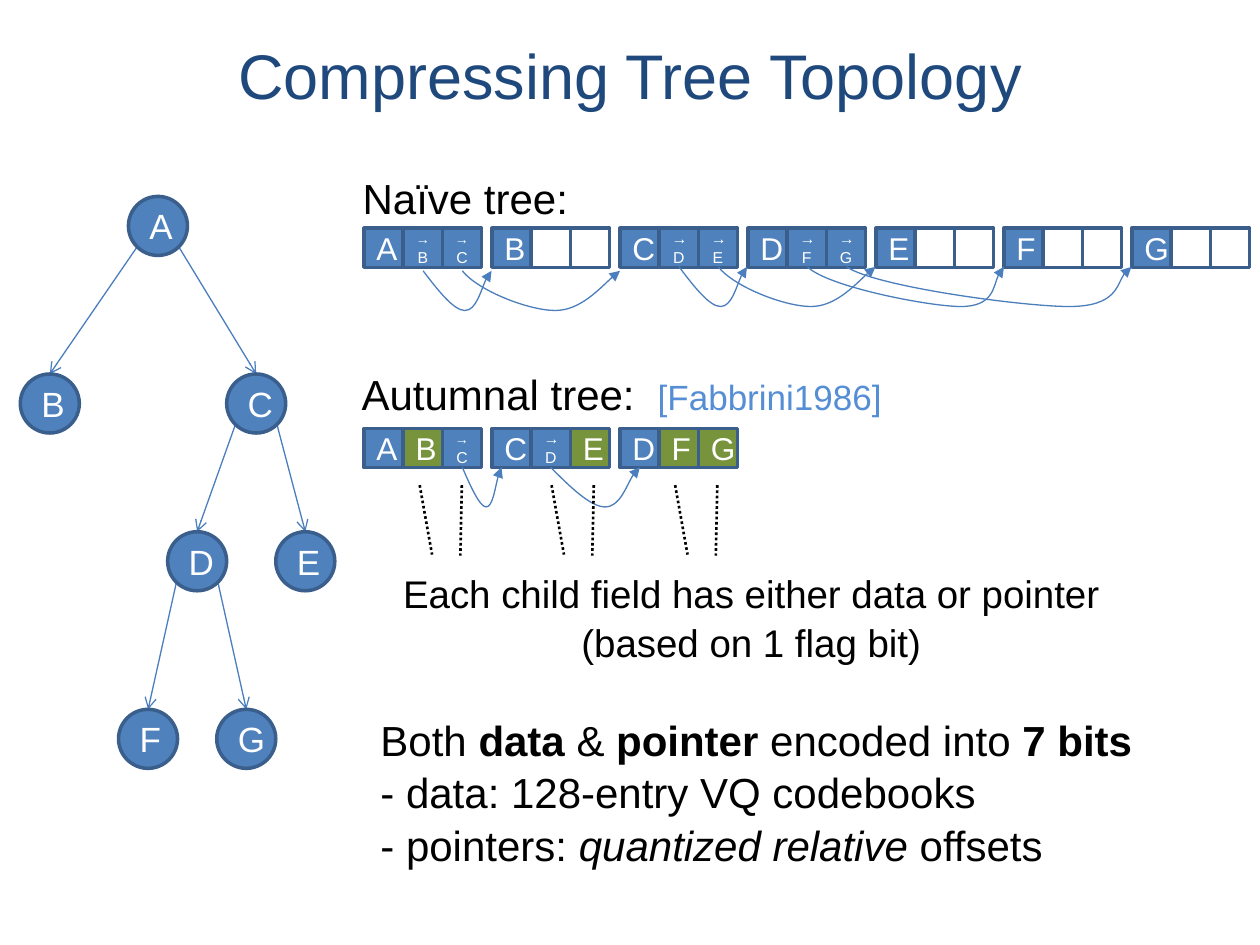
from lxml.etree import SubElement
from pptx import Presentation
from pptx.dml.color import RGBColor
from pptx.enum.dml import MSO_LINE
from pptx.enum.shapes import MSO_CONNECTOR, MSO_SHAPE
from pptx.enum.text import MSO_ANCHOR, MSO_AUTO_SIZE, PP_ALIGN
from pptx.oxml import parse_xml
from pptx.oxml.ns import nsdecls, qn
from pptx.util import Cm, Pt

BLUE, GREEN, WHITE, BLACK = "4F81BD", "77933C", "FFFFFF", "000000"
OUTLINE, LINK = "3A5F8C", "4B7EBC"

# Lengths are in centimetres
CELL, RECORD_PITCH, RECORDS_LEFT = 0.79, 2.58, 7.34
NODE = 1.19
NAIVE_TOP, AUTUMNAL_TOP = 4.6, 8.64

NAIVE_RECORDS = [("A", "→ B", "→ C"), ("B", "", ""), ("C", "→D", "→E"),
                 ("D", "→F", "→G"), ("E", "", ""), ("F", "", ""), ("G", "", "")]
AUTUMNAL_RECORDS = [("A", "B", "→ C"), ("C", "→D", "E"), ("D", "F", "G")]

NODES = {"A": (2.59, 3.96), "B": (0.41, 7.54), "C": (4.57, 7.54), "D": (3.38, 10.72),
         "E": (5.56, 10.72), "F": (2.39, 14.3), "G": (4.37, 14.3)}
EDGES = ["AB", "AC", "CD", "CE", "DF", "DG"]

# Pointer curves: horizontal shares of the width, and vertical shares of the depth
SHORT = (0, 0.22, 0.45, 0.61, 0.78, 0.91, 1)
MEDIUM = (0, 0.1, 0.42, 0.59, 0.75, 0.96, 1)
LONG = (0, 0.1, 0.62, 0.78, 0.95, 0.96, 1)
DEPTH_SHARES = (0, 0.5, 1, 1, 1, 0.09, 0)
POINTERS = [  # start, end, top, profile
    (8.53, 9.91, 5.46, SHORT), (9.32, 12.5, 5.46, MEDIUM),
    (13.69, 15.06, 5.38, SHORT), (14.48, 17.65, 5.38, MEDIUM),
    (16.28, 20.24, 5.38, LONG), (17.07, 22.81, 5.38, LONG),
    (9.32, 10.11, 9.42, SHORT), (11.1, 12.9, 9.42, SHORT),
]


def color(hex_string):
    return RGBColor.from_string(hex_string)


def add_run(paragraph, text, hex_string, **formats):
    run = paragraph.add_run()
    run.text = text
    run.font.color.rgb = color(hex_string)
    for name, value in {"name": "Arial", **formats}.items():
        setattr(run.font, name, value)
    return run


def style_line(line, hex_string, width):
    line.color.rgb = color(hex_string)
    line.width = Pt(width)


def add_arrowhead(shape, kind):
    line = shape.element.xpath(".//a:ln")[0]
    SubElement(line, qn("a:tailEnd"), type=kind)


def add_text(slide, box, lines, size, line_break=False, tab=None,
             alignment=PP_ALIGN.LEFT, margin=None):
    """Each line is a list of (text, formats) runs."""
    frame = slide.shapes.add_textbox(*map(Cm, box)).text_frame
    frame.word_wrap = False
    frame.auto_size = MSO_AUTO_SIZE.SHAPE_TO_FIT_TEXT
    if margin is not None:
        for side in ("left", "top", "right", "bottom"):
            setattr(frame, f"margin_{side}", Cm(margin))
    paragraph = frame.paragraphs[0]
    for index, runs in enumerate(lines):
        if index and line_break:
            paragraph.add_line_break()
        elif index:
            paragraph = frame.add_paragraph()
        paragraph.alignment = alignment
        paragraph.line_spacing = 1.05
        if tab:
            tabs = SubElement(paragraph._p.get_or_add_pPr(), qn("a:tabLst"))
            SubElement(tabs, qn("a:tab"), pos=str(Cm(tab)), algn="l")
        for text, formats in runs:
            values = {"hex_string": BLACK, "size": Pt(size), **formats}
            add_run(paragraph, text, **values)


def add_title(slide, text):
    frame = slide.shapes.add_textbox(Cm(1.27), Cm(0), Cm(22.86), Cm(3.18)).text_frame
    frame.word_wrap = True
    frame.vertical_anchor = MSO_ANCHOR.MIDDLE
    paragraph = frame.paragraphs[0]
    paragraph.alignment = PP_ALIGN.CENTER
    paragraph.line_spacing = 0.9
    run = add_run(paragraph, text, "1F497D", size=Pt(36))
    # Soft shadow behind the letters
    shadow = parse_xml(
        f'<a:effectLst {nsdecls("a")}><a:outerShdw blurRad="38100" dist="38100" dir="2700000">'
        '<a:srgbClr val="000000"><a:alpha val="43000"/></a:srgbClr></a:outerShdw></a:effectLst>')
    run._r.xpath("./a:rPr/a:solidFill")[0].addnext(shadow)


def add_label_shape(slide, kind, left, top, side, fill, runs):
    shape = slide.shapes.add_shape(kind, Cm(left), Cm(top), Cm(side), Cm(side))
    shape.shadow.inherit = False
    shape.fill.solid()
    shape.fill.fore_color.rgb = color(fill)
    style_line(shape.line, OUTLINE, 2)
    paragraph = shape.text_frame.paragraphs[0]
    paragraph.alignment = PP_ALIGN.CENTER
    for text, size in runs:
        add_run(paragraph, text, WHITE, size=Pt(size))


def add_records(slide, records, top):
    for row, record in enumerate(records):
        for column, text in enumerate(record):
            left = RECORDS_LEFT + row * RECORD_PITCH + column * CELL
            if text.startswith("→"):
                fill = BLUE
                runs = [("→", 8 if " " in text else 9), (text[1:], 9)]
            else:
                fill = WHITE if not text else GREEN if column else BLUE
                runs = [(text, 18)] if text else []
            add_label_shape(slide, MSO_SHAPE.RECTANGLE, left, top, CELL, fill, runs)


def add_line(slide, start, end, hex_string, width):
    connector = slide.shapes.add_connector(MSO_CONNECTOR.STRAIGHT, *map(Cm, (*start, *end)))
    style_line(connector.line, hex_string, width)
    SubElement(connector.element.spPr, qn("a:effectLst"))
    return connector


def add_tree(slide):
    for parent, child in EDGES:
        left, top = NODES[parent]
        child_left, child_top = NODES[child]
        # From the lower left or right of the parent to the top of the child
        share = 0.15 if child_left < left else 0.85
        start = (left + share * NODE, top + 0.85 * NODE)
        edge = add_line(slide, start, (child_left + NODE / 2, child_top), LINK, 0.75)
        add_arrowhead(edge, "arrow")
    for name, (left, top) in NODES.items():
        add_label_shape(slide, MSO_SHAPE.OVAL, left, top, NODE, BLUE, [(name, 20)])


def add_pointer(slide, start, end, top, profile, depth=0.8):
    points = [(Cm(start + x * (end - start)), Cm(top + y * depth))
              for x, y in zip(profile, DEPTH_SHARES)]
    builder = slide.shapes.build_freeform(*points[0])
    builder.add_line_segments(points[1:], close=False)
    shape = builder.convert_to_shape()
    # Turn each three segments into one Bézier curve
    segments = shape.element.xpath(".//a:lnTo")
    outline = segments[0].getparent()
    for first in range(0, len(segments), 3):
        curve = SubElement(outline, qn("a:cubicBezTo"))
        for segment in segments[first:first + 3]:
            curve.append(segment[0])
            outline.remove(segment)
    shape.shadow.inherit = False
    shape.fill.background()
    style_line(shape.line, LINK, 0.75)
    add_arrowhead(shape, "triangle")


def add_dotted_pairs(slide):
    top = 9.78
    for left in (8.46, 11.12, 13.61):
        for offset, shift, height in ((0, 0.25, 1.4), (0.85, -0.03, 1.42)):
            x = left + offset
            line = add_line(slide, (x, top), (x + shift, top + height), BLACK, 1.5)
            line.line.dash_style = MSO_LINE.ROUND_DOT


def main():
    presentation = Presentation()
    presentation.slide_width, presentation.slide_height = Cm(25.4), Cm(19.05)
    slide = presentation.slides.add_slide(presentation.slide_layouts[6])
    add_title(slide, "Compressing Tree Topology")

    # Tree and its two memory layouts
    add_tree(slide)
    add_text(slide, (7.06, 3.3, 4.7, 1.27), [[("Naïve tree:", {})]], 24)
    add_records(slide, NAIVE_RECORDS, NAIVE_TOP)
    citation = ("[Fabbrini1986]", {"size": Pt(20), "hex_string": "558ED5"})
    add_text(slide, (7.04, 7.26, 11.1, 1.27), [[("Autumnal tree:\t", {}), citation]], 24, tab=5.97)
    add_records(slide, AUTUMNAL_RECORDS, AUTUMNAL_TOP)
    for pointer in POINTERS:
        add_pointer(slide, *pointer)

    # Explanations
    add_text(slide, (7.98, 11.4, 14.33, 1.98),
             [[("Each child field has either data or pointer", {})], [("(based on 1 flag bit)", {})]],
             22, line_break=True, alignment=PP_ALIGN.CENTER, margin=0.05)
    add_dotted_pairs(slide)
    bold, italic = {"bold": True}, {"italic": True}
    add_text(slide, (7.42, 14.22, 15.8, 3.33), [
        [("Both ", {}), ("data", bold), (" & ", {}), ("pointer", bold),
         (" encoded into ", {}), ("7 bits", bold)],
        [("- data: 128-entry VQ codebooks", {})],
        [("- pointers: ", {}), ("quantized relative", italic), (" offsets", {})]], 24)
    presentation.save("out.pptx")


if __name__ == "__main__":
    main()
